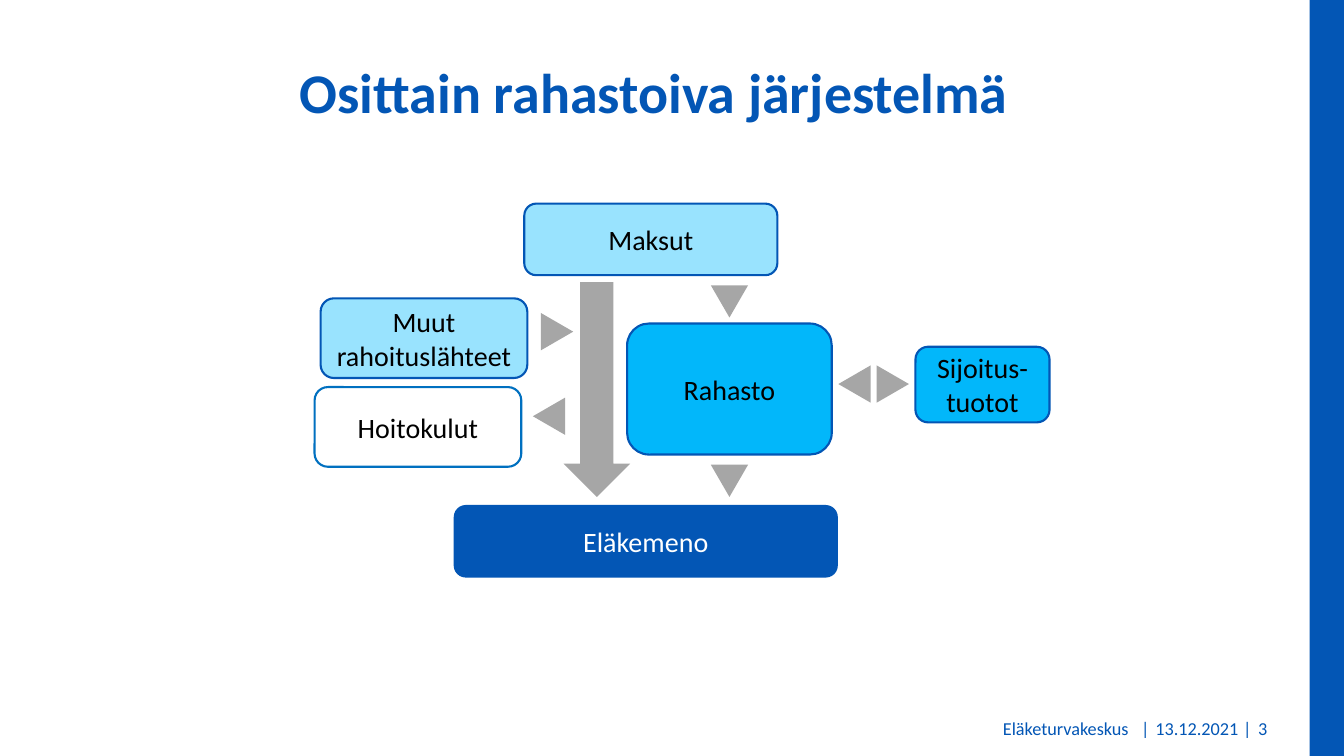
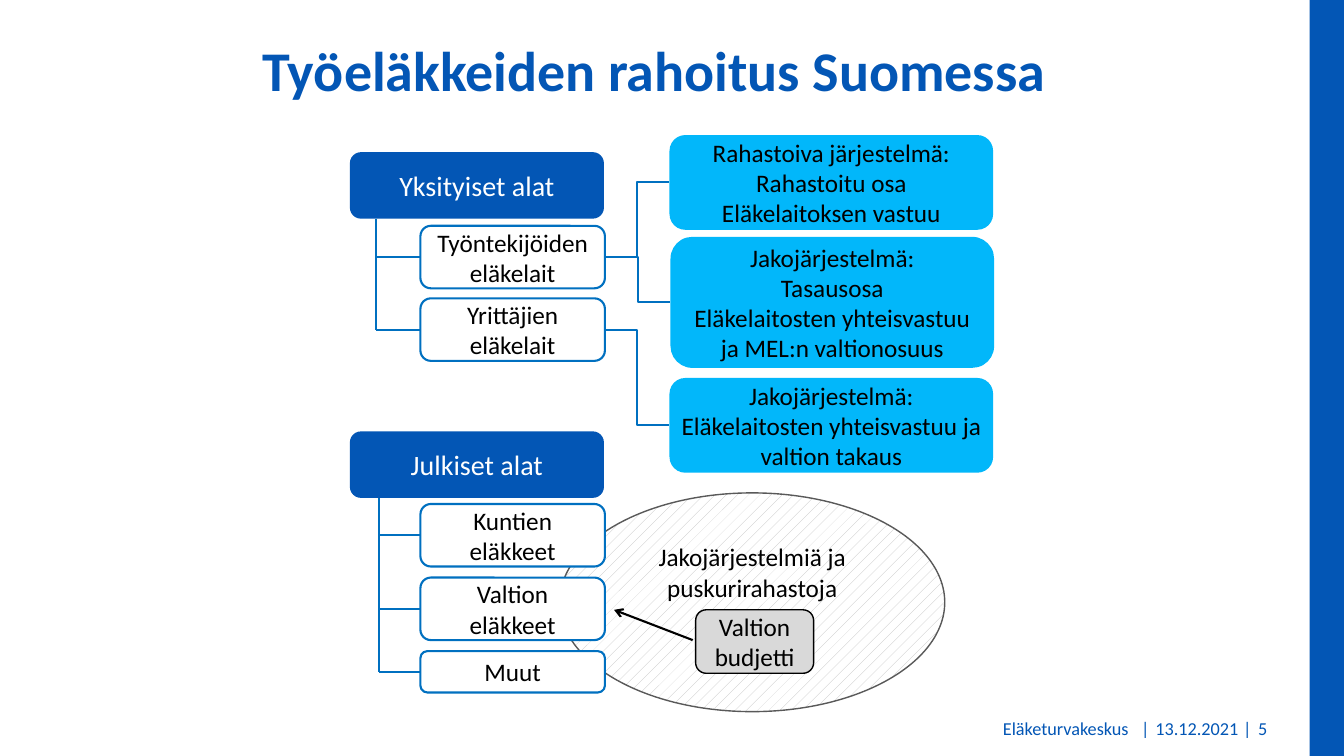
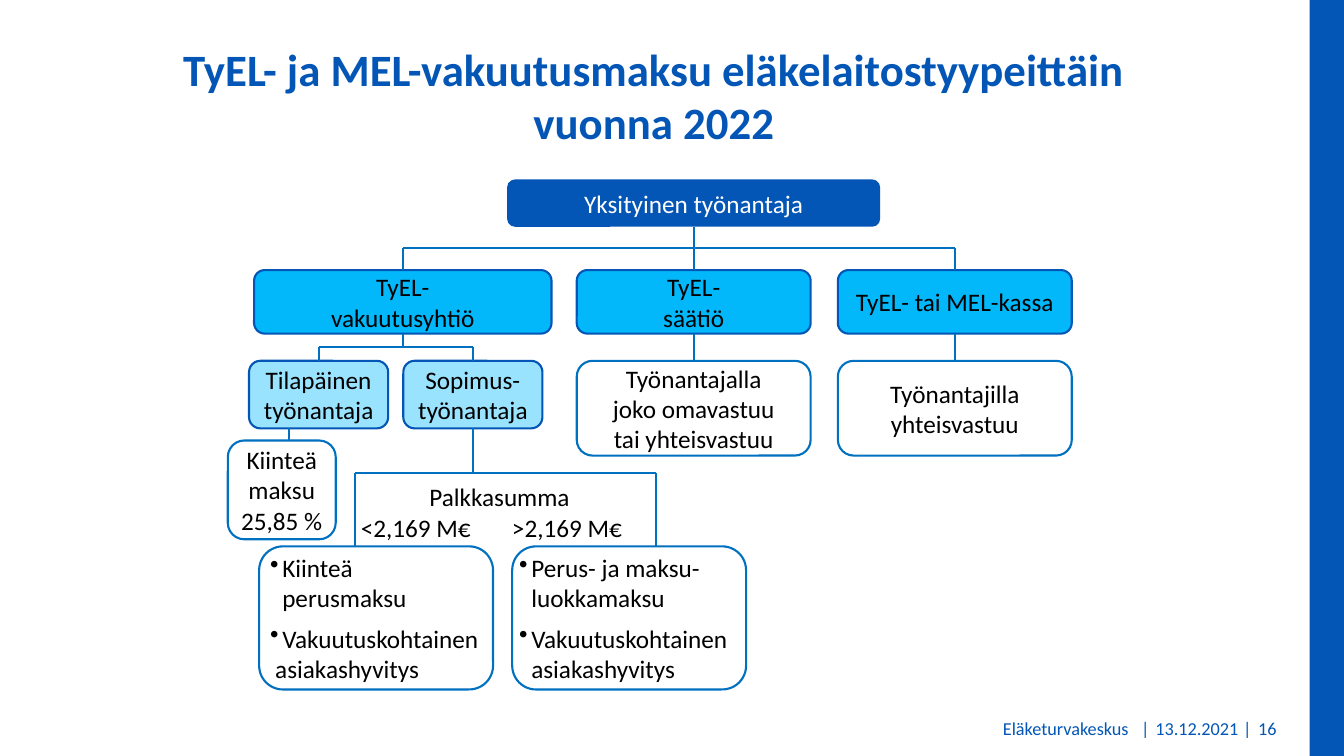
import pptx
import pptx.dml.color
import pptx.enum.dml
import pptx.enum.shapes
import pptx.enum.text
import pptx.oxml
import pptx.oxml.ns
import pptx.util

Inches = pptx.util.Inches
Pt = pptx.util.Pt
RGB = pptx.dml.color.RGBColor
SHAPE = pptx.enum.shapes.MSO_SHAPE
CONNECTOR = pptx.enum.shapes.MSO_CONNECTOR
ALIGN = pptx.enum.text.PP_ALIGN
ANCHOR = pptx.enum.text.MSO_ANCHOR

BLUE = RGB(0x03, 0x56, 0xB5)
LINE_BLUE = RGB(0x00, 0x70, 0xC0)
BRIGHT = RGB(0x02, 0xB7, 0xFA)
PALE = RGB(0x99, 0xE3, 0xFE)
WHITE = RGB(0xFF, 0xFF, 0xFF)
BLACK = RGB(0, 0, 0)
ARROW_GREY = RGB(0xA6, 0xA6, 0xA6)
HATCH_GREY = RGB(0xBF, 0xBF, 0xBF)
LIGHT_GREY = RGB(0xD9, 0xD9, 0xD9)
DARK_GREY = RGB(0x59, 0x59, 0x59)

FONT = "Calibri"
TOP, LEFT, BOTTOM, RIGHT = range(4)
TIGHT = 0.04


def add_xml(parent, xml):
    tag, rest = xml.split(" ", 1)
    ns = pptx.oxml.ns.nsdecls("a")
    parent.append(pptx.oxml.parse_xml(f"<a:{tag} {ns} {rest}"))


def indent(p, margin, hanging=0):
    pPr = p._p.get_or_add_pPr()
    pPr.set("marL", str(Inches(margin)))
    pPr.set("indent", str(-Inches(hanging)))
    return pPr


def center_x(sp):
    return (sp.left + sp.width // 2) / Inches(1)


def center_y(sp):
    return (sp.top + sp.height // 2) / Inches(1)


class Deck:
    """Holds the presentation, its style and the slide being built."""

    def __init__(self):
        self.prs = pptx.Presentation()
        self.prs.slide_width = Inches(13.33)
        self.prs.slide_height = Inches(7.5)

    def slide(self, number, title, top, height, size=40):
        self.shapes = self.prs.slides.add_slide(self.prs.slide_layouts[5]).shapes
        self.shape(SHAPE.RECTANGLE, 12.99, 0, 0.34, 7.5, BLUE)
        for text, left, width, align in (
            ("Eläketurvakeskus", 9.1, 2.19, ALIGN.RIGHT),
            ("|", 11.22, 0.29, ALIGN.LEFT),
            ("13.12.2021", 11.29, 1.16, ALIGN.CENTER),
            ("|", 12.23, 0.29, ALIGN.LEFT),
            (number, 12.38, 0.6, ALIGN.LEFT),
        ):
            tf = self.text(left, 7.05, width, 0.35, [text], 13, BLUE, align)
            tf.vertical_anchor = ANCHOR.MIDDLE
        sp = self.shapes.title
        sp.left, sp.top = Inches(0), Inches(top)
        sp.width, sp.height = Inches(12.97), Inches(height)
        tf = sp.text_frame
        tf.auto_size = pptx.enum.text.MSO_AUTO_SIZE.NONE
        tf.vertical_anchor = ANCHOR.TOP
        self.fill_text(tf, [title], size, BLUE, ALIGN.CENTER, bold=True)

    def fill_text(self, tf, lines, size, color, align, bold=False):
        tf.word_wrap = True
        for i, text in enumerate(lines):
            p = tf.add_paragraph() if i else tf.paragraphs[0]
            p.text = text
            p.alignment = align
            p.font.name, p.font.size = FONT, Pt(size)
            p.font.bold = bold
            p.font.color.rgb = color

    def text(self, left, top, width, height, lines, size=18, color=BLACK, align=ALIGN.LEFT):
        sp = self.shapes.add_textbox(Inches(left), Inches(top), Inches(width), Inches(height))
        self.fill_text(sp.text_frame, lines, size, color, align)
        return sp.text_frame

    def shape(self, kind, left, top, width, height, fill, line=None, weight=1.5):
        sp = self.shapes.add_shape(kind, Inches(left), Inches(top), Inches(width), Inches(height))
        sp.shadow.inherit = False
        sp.fill.solid()
        sp.fill.fore_color.rgb = fill
        if line is None:
            sp.line.fill.background()
        else:
            sp.line.color.rgb = line
            sp.line.width = Pt(weight)
        return sp

    def label(self, sp, lines, size=18, color=BLACK, inset=0.1, bottom=0, align=ALIGN.CENTER):
        tf = sp.text_frame
        tf.margin_left = tf.margin_right = Inches(inset)
        tf.margin_top, tf.margin_bottom = 0, Inches(bottom)
        tf.vertical_anchor = ANCHOR.MIDDLE
        self.fill_text(tf, lines, size, color, align)

    def box(self, left, top, width, height, lines, fill=WHITE, line=LINE_BLUE,
            size=18, inset=0.1, weight=1.5):
        sp = self.shape(SHAPE.ROUNDED_RECTANGLE, left, top, width, height, fill, line, weight)
        self.label(sp, lines, size, WHITE if fill == BLUE else BLACK, inset)
        return sp

    def bullet_box(self, left, items, inset):
        """Each item is its bulleted line, its second line and that line's indent."""
        sp = self.shape(SHAPE.ROUNDED_RECTANGLE, left, 5.42, 2.32, 1.42, WHITE, LINE_BLUE)
        lines = [text for item in items for text in item[:2]]
        self.label(sp, lines, inset=inset, align=ALIGN.LEFT)
        paragraphs = sp.text_frame.paragraphs
        for i, (_, _, margin) in enumerate(items):
            head, tail = paragraphs[2 * i:2 * i + 2]
            add_xml(indent(head, 0.12, 0.12), 'buChar char="•"/>')
            indent(tail, margin)
            if i:
                head.space_before = Pt(7)

    def triangle(self, left, top, rotation=0):
        sp = self.shape(SHAPE.FLOWCHART_MERGE, left, top, 0.37, 0.32, ARROW_GREY)
        sp.rotation = rotation

    def line(self, start, end, kind=CONNECTOR.STRAIGHT, color=LINE_BLUE, arrow=False):
        """Each end is a point (x, y) or a pair of shape and side."""
        joined = [not isinstance(e[0], (int, float)) for e in (start, end)]
        points = [(0, 0) if j else e for j, e in zip(joined, (start, end))]
        cn = self.shapes.add_connector(kind, *(Inches(v) for xy in points for v in xy))
        if joined[0]:
            cn.begin_connect(*start)
        if joined[1]:
            cn.end_connect(*end)
        cn.line.color.rgb = color
        cn.line.width = Pt(1.5)
        if arrow:
            add_xml(cn.line._get_or_add_ln(), 'tailEnd type="arrow"/>')
        add_xml(cn._element.spPr, "effectLst />")

    def side_branch(self, x, parent, children):
        """Trunk down from the parent at x, with a stub to each child."""
        bottom = (parent.top + parent.height) / Inches(1)
        self.line((x, bottom), (x, center_y(children[-1])))
        for child in children:
            self.line((x, center_y(child)), (child, LEFT))

    def tree(self, y, parent, children):
        """Parent over a crossbar at y, with a drop to each child."""
        self.line((parent, BOTTOM), (center_x(parent), y))
        self.line((center_x(children[0]), y), (center_x(children[-1]), y))
        for child in children:
            self.line((center_x(child), y), (child, TOP))


def partly_funded(deck):
    deck.slide("3", "Osittain rahastoiva järjestelmä", 0.52, 0.79)
    for left, top, width, height, lines, fill, line in (
        (5.2, 2.02, 2.51, 0.71, ["Maksut"], PALE, BLUE),
        (3.18, 2.96, 2.05, 0.79, ["Muut rahoituslähteet"], PALE, BLUE),
        (6.22, 3.21, 2.03, 1.3, ["Rahasto"], BRIGHT, BLUE),
        (9.08, 3.44, 1.33, 0.75, ["Sijoitus-", "tuotot"], BRIGHT, BLUE),
        (3.12, 3.84, 2.05, 0.79, ["Hoitokulut"], WHITE, LINE_BLUE),
        (4.5, 5.01, 3.81, 0.72, ["Eläkemeno"], BLUE, None),
    ):
        deck.box(left, top, width, height, lines, fill, line, size=20)
    deck.shape(SHAPE.DOWN_ARROW, 5.59, 2.8, 0.66, 2.13, ARROW_GREY)
    for left, top, rotation in (
        (7.05, 2.83, 0), (7.05, 4.61, 0), (5.34, 3.13, 270),
        (8.67, 3.65, 270), (8.29, 3.65, 90), (5.26, 3.97, 90),
    ):
        deck.triangle(left, top, rotation)


def pension_financing(deck):
    deck.slide("5", "Työeläkkeiden rahoitus Suomessa", 0.3, 0.72)
    private, public = (
        deck.box(3.47, top, 2.52, 0.66, [text], BLUE, None, size=20)
        for top, text in ((1.51, "Yksityiset alat"), (4.28, "Julkiset alat"))
    )
    funded, pooled, guaranteed = (
        deck.box(left, top, 3.21, height, lines, BRIGHT, None, inset=0)
        for left, top, height, lines in (
            (6.64, 1.34, 0.94,
             ["Rahastoiva järjestelmä:", "Rahastoitu osa", "Eläkelaitoksen vastuu"]),
            (6.65, 2.35, 1.3,
             ["Jakojärjestelmä:", "Tasausosa", "Eläkelaitosten yhteisvastuu",
              "ja MEL:n valtionosuus"]),
            (6.64, 3.75, 0.94,
             ["Jakojärjestelmä:", "Eläkelaitosten yhteisvastuu ja valtion takaus"]),
        )
    )
    buffer_funds = deck.shape(SHAPE.OVAL, 5.55, 4.89, 3.82, 2.17, WHITE, DARK_GREY, 1)
    buffer_funds.fill.patterned()
    buffer_funds.fill.pattern = pptx.enum.dml.MSO_PATTERN.PERCENT_10
    buffer_funds.fill.fore_color.rgb = HATCH_GREY
    buffer_funds.fill.back_color.rgb = WHITE
    deck.label(buffer_funds, ["Jakojärjestelmiä ja puskurirahastoja"], bottom=0.6)

    employees, self_employed, municipal, state, others = (
        deck.box(4.17, top, 1.83, height, [text], inset=inset)
        for top, height, text, inset in (
            (2.24, 0.62, "Työntekijöiden eläkelait", TIGHT),
            (2.96, 0.62, "Yrittäjien eläkelait", 0.1),
            (5, 0.62, "Kuntien eläkkeet", 0.1),
            (5.73, 0.62, "Valtion eläkkeet", 0.1),
            (6.46, 0.41, "Muut", 0.1),
        )
    )
    deck.side_branch(3.73, private, [employees, self_employed])
    deck.side_branch(3.76, public, [municipal, state, others])
    for law, system in ((employees, funded), (employees, pooled), (self_employed, guaranteed)):
        deck.line((law, RIGHT), (system, LEFT), CONNECTOR.ELBOW)
    deck.box(6.9, 6.05, 1.17, 0.63, ["Valtion budjetti"], LIGHT_GREY, BLACK, weight=1)
    deck.line((6.87, 6.35), (6.09, 6.05), color=BLACK, arrow=True)


def contribution_by_provider(deck):
    deck.slide("16", "TyEL- ja MEL-vakuutusmaksu eläkelaitostyypeittäin\vvuonna 2022",
               0.36, 1.11, size=32)
    employer = deck.box(5.03, 1.78, 3.7, 0.47, ["Yksityinen työnantaja"], BLUE, None)
    company, foundation, fund = (
        deck.box(left, 2.68, width, 0.63, lines, BRIGHT, BLUE, inset=TIGHT)
        for left, width, lines in (
            (2.52, 2.95, ["TyEL-", "vakuutusyhtiö"]),
            (5.72, 2.32, ["TyEL-", "säätiö"]),
            (8.31, 2.32, ["TyEL- tai MEL-kassa"]),
        )
    )
    temporary, contract = (
        deck.box(left, 3.58, 1.38, 0.67, [text, "työnantaja"], PALE, BLUE, inset=TIGHT)
        for left, text in ((2.47, "Tilapäinen"), (4, "Sopimus-"))
    )
    deck.tree(2.46, employer, [company, foundation, fund])
    deck.tree(3.44, company, [temporary, contract])
    for provider, left, lines in (
        (foundation, 5.72, ["Työnantajalla", "joko omavastuu", "tai yhteisvastuu"]),
        (fund, 8.31, ["Työnantajilla", "yhteisvastuu"]),
    ):
        liability = deck.box(left, 3.58, 2.32, 0.94, lines)
        deck.line((provider, BOTTOM), (liability, TOP))

    deck.box(2.26, 4.37, 1.07, 0.98, ["Kiinteä", "maksu", "25,85 %"], inset=TIGHT)
    deck.line((2.87, 4.25), (2.87, 4.37))
    deck.line((contract, BOTTOM), (4.69, 4.69))
    deck.line((3.52, 4.69), (6.51, 4.69))
    for x in (3.52, 6.51):
        deck.line((x, 4.69), (x, 5.42))
    tf = deck.text(3.48, 4.73, 3.06, 0.71, ["Palkkasumma", "<2,169 M€\t>2,169 M€"])
    indent(tf.paragraphs[0], 0.68)
    add_xml(indent(tf.paragraphs[1], 0),
            f'tabLst ><a:tab pos="{Inches(1.44)}" algn="l"/></a:tabLst>')
    # The schema wants tab stops ahead of the default run properties.
    pPr = tf.paragraphs[1]._p.pPr
    pPr.insert(0, pPr[-1])

    deck.bullet_box(2.57, [("Kiinteä", "perusmaksu", 0.12),
                           ("Vakuutuskohtainen", "asiakashyvitys", 0.05)], TIGHT)
    deck.bullet_box(5.08, [("Perus- ja maksu-", "luokkamaksu", 0.12),
                           ("Vakuutuskohtainen", "asiakashyvitys", 0.12)], 0)
    # Bullets also come ahead of the default run properties.
    for sp in list(deck.shapes)[-2:]:
        for p in sp.text_frame.paragraphs:
            for bullet in p._p.pPr.findall(pptx.oxml.ns.qn("a:buChar")):
                bullet.getparent().find(pptx.oxml.ns.qn("a:defRPr")).addprevious(bullet)


def main():
    deck = Deck()
    partly_funded(deck)
    pension_financing(deck)
    contribution_by_provider(deck)
    deck.prs.save("out.pptx")


if __name__ == "__main__":
    main()
